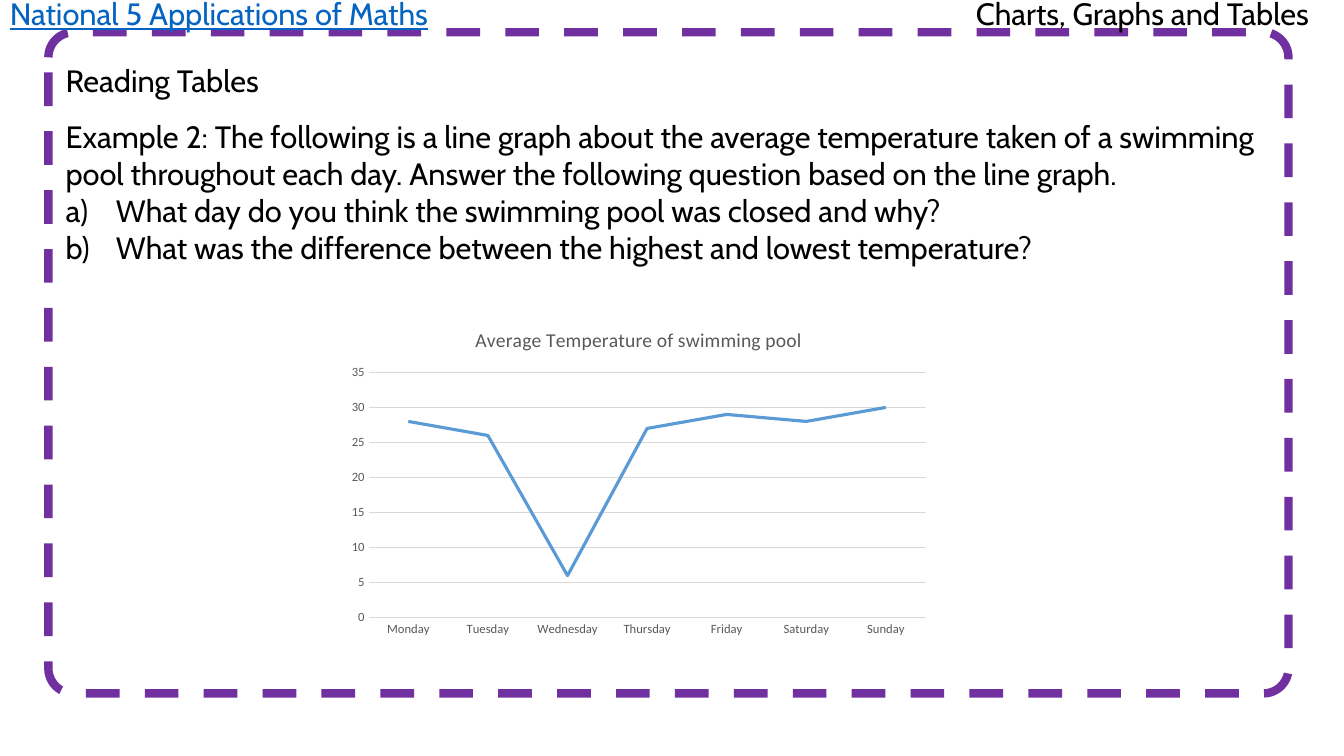
from pptx import Presentation
from pptx import util as u
from pptx.chart.data import CategoryChartData
from pptx.dml.color import RGBColor
from pptx.enum import chart as charts, dml, shapes, text
from pptx.oxml.ns import qn
from lxml import etree

PURPLE = RGBColor(0x70, 0x30, 0xA0)
BLACK = RGBColor(0x00, 0x00, 0x00)
LINK_BLUE = RGBColor(0x05, 0x63, 0xC1)
LINE_BLUE = RGBColor(0x5B, 0x9B, 0xD5)
GREY = RGBColor(0x59, 0x59, 0x59)
GRID_GREY = RGBColor(0xD9, 0xD9, 0xD9)

INTRO = ("Example 2: The following is a line graph about the average temperature taken "
         "of a swimming pool throughout each day. Answer the following question based "
         "on the line graph.")
QUESTIONS = ["What day do you think the swimming pool was closed and why?",
             "What was the difference between the highest and lowest temperature?"]
CHART_TITLE = "Average Temperature of swimming pool"
TEMPERATURES = {"Monday": 28, "Tuesday": 26, "Wednesday": 6, "Thursday": 27,
                "Friday": 29, "Saturday": 28, "Sunday": 30}


def style_font(font, name, size, color):
    font.name = name
    font.size = u.Pt(size)
    font.bold = False
    font.color.rgb = color


def write_text(shape, lines, font="Cabin", size=22, color=BLACK, underline=False, wrap=False):
    frame = shape.text_frame
    frame.text = "\n".join(lines)
    frame.word_wrap = wrap
    frame.auto_size = text.MSO_AUTO_SIZE.NONE
    frame.vertical_anchor = text.MSO_ANCHOR.TOP
    for paragraph in frame.paragraphs:
        paragraph.alignment = text.PP_ALIGN.LEFT
        paragraph.space_before = u.Pt(0)
        run = paragraph.runs[0]
        style_font(run.font, font, size, color)
        run.font.underline = underline


def set_list_mark(paragraph, numbering=None, indent=0):
    """Give the paragraph automatic numbering, or no mark at all."""
    properties = paragraph._p.get_or_add_pPr()
    properties.set("marL", str(u.Inches(indent)))
    properties.set("indent", str(-u.Inches(indent)))
    if numbering:
        etree.SubElement(properties, qn("a:buFont"), typeface="+mj-lt")
        etree.SubElement(properties, qn("a:buAutoNum"), type=numbering)
    else:
        etree.SubElement(properties, qn("a:buNone"))


class LessonSlide:
    def __init__(self, presentation):
        self.slide = presentation.slides.add_slide(presentation.slide_layouts[1])
        self.shapes = self.slide.shapes

    def place(self, shape, left, top, width, height):
        shape.left, shape.top = u.Inches(left), u.Inches(top)
        shape.width, shape.height = u.Inches(width), u.Inches(height)

    def frame(self, *box):
        shape = self.shapes.add_shape(shapes.MSO_SHAPE.ROUNDED_RECTANGLE, *map(u.Inches, box))
        shape.adjustments[0] = 0.038
        shape.shadow.inherit = False
        shape.fill.background()
        shape.line.color.rgb = PURPLE
        shape.line.width = u.Pt(6)
        shape.line.dash_style = dml.MSO_LINE.DASH

    def header(self, words, *box, **style):
        write_text(self.shapes.add_textbox(*map(u.Inches, box)), [words], **style)

    def title(self, words, *box):
        self.place(self.shapes.title, *box)
        write_text(self.shapes.title, [words])

    def exercise(self, intro, questions, *box):
        body = self.slide.placeholders[1]
        self.place(body, *box)
        write_text(body, [intro, *questions], wrap=True)
        first, *rest = body.text_frame.paragraphs
        set_list_mark(first)
        for paragraph in rest:
            set_list_mark(paragraph, "alphaLcParenR", 0.5)

    def line_chart(self, title, values, *box):
        data = CategoryChartData()
        data.categories = list(values)
        data.add_series(title, list(values.values()))
        chart = self.shapes.add_chart(charts.XL_CHART_TYPE.LINE, *map(u.Inches, box), data).chart
        style_font(chart.font, "Calibri", 10, BLACK)
        chart.has_legend = False
        chart.has_title = True
        chart.chart_title.include_in_layout = False
        chart.chart_title.text_frame.text = title
        style_font(chart.chart_title.text_frame.paragraphs[0].runs[0].font, "Calibri", 14, GREY)

        plot = chart.plots[0]
        plot.vary_by_categories = False
        series = plot.series[0]
        series.smooth = False
        series.marker.style = charts.XL_MARKER_STYLE.NONE
        series.format.line.color.rgb = LINE_BLUE
        series.format.line.width = u.Pt(2.25)

        days, degrees = chart.category_axis, chart.value_axis
        for axis in (days, degrees):
            axis.major_tick_mark = axis.minor_tick_mark = charts.XL_TICK_MARK.NONE
            style_font(axis.tick_labels.font, "Calibri", 9, GREY)
        degrees.minimum_scale, degrees.maximum_scale, degrees.major_unit = 0, 35, 5
        degrees.has_major_gridlines = True
        degrees.format.line.fill.background()
        for line in (days.format.line, degrees.major_gridlines.format.line):
            line.color.rgb = GRID_GREY
            line.width = u.Pt(0.75)


def main():
    presentation = Presentation()
    presentation.slide_width = u.Inches(13.33)
    presentation.slide_height = u.Inches(7.5)
    lesson = LessonSlide(presentation)
    lesson.frame(0.48, 0.32, 12.3, 6.56)
    lesson.header("Charts, Graphs and Tables", 9.58, -0.1, 3.78, 0.47)
    lesson.header("National 5 Applications of Maths", 0, -0.1, 4.63, 0.47,
                  color=LINK_BLUE, underline=True)
    lesson.title("Reading Tables", 0.55, 0.56, 2.22, 0.47)
    lesson.line_chart(CHART_TITLE, TEMPERATURES, 3.37, 3.08, 5.93, 3.3)
    lesson.exercise(INTRO, QUESTIONS, 0.55, 1.12, 12.1, 1.95)
    presentation.save("out.pptx")


if __name__ == "__main__":
    main()
